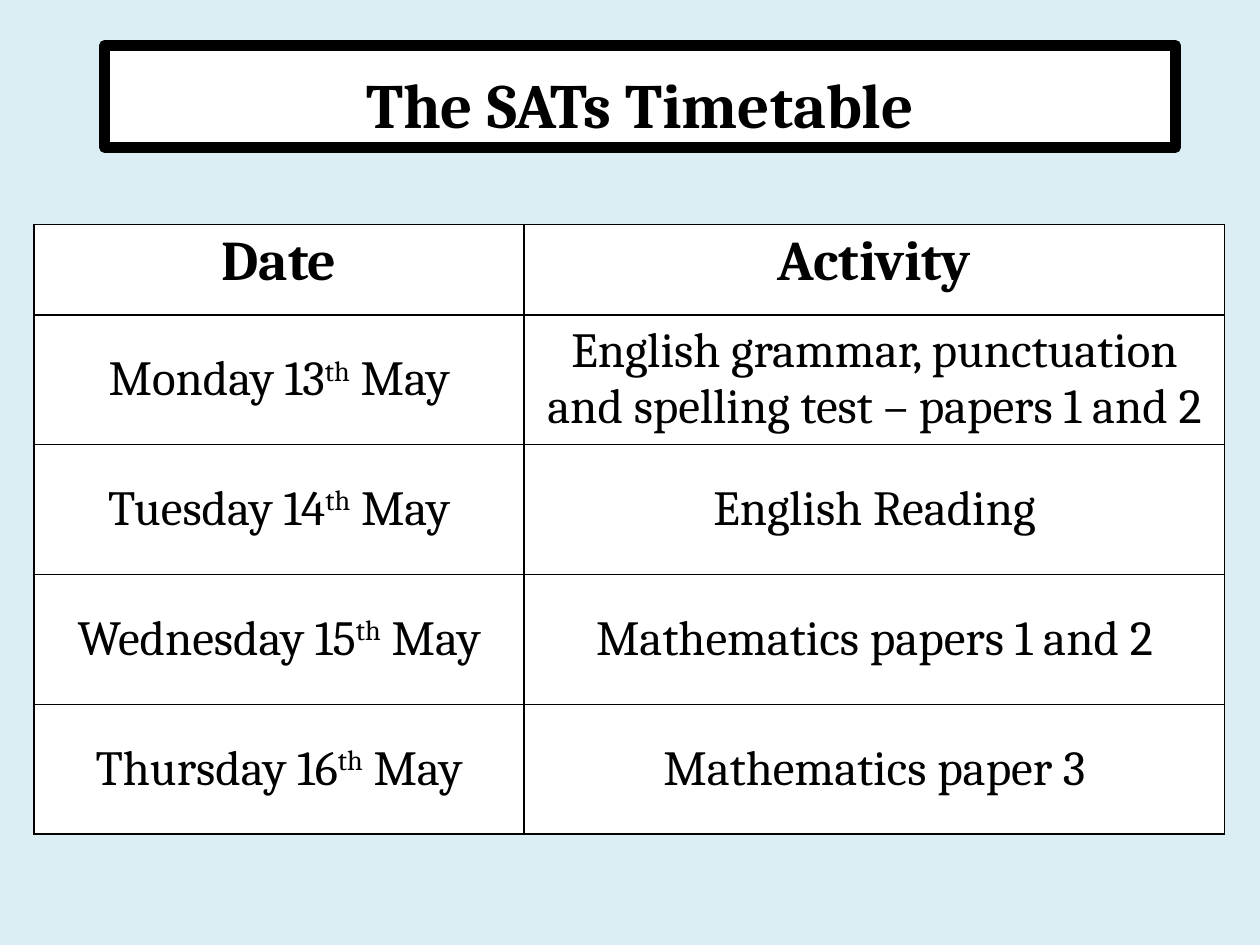
from lxml.etree import SubElement
from pptx import Presentation
from pptx.dml.color import RGBColor
from pptx.enum.text import MSO_ANCHOR as ANCHOR, MSO_AUTO_SIZE as AUTOSIZE, PP_ALIGN as ALIGN
from pptx.oxml.ns import qn
from pptx.util import Inches, Pt

COLORS = {"background": "DBEEF4", "panel": "FFFFFF", "ink": "000000"}
RGB = {name: RGBColor.from_string(value) for name, value in COLORS.items()}
FONT = "Cambria"


def add_run(p, text, size, bold=False, superscript=False):
    p.alignment = ALIGN.CENTER
    r = p.add_run()
    r.text = text
    r.font.name, r.font.size, r.font.bold = FONT, Pt(size), bold
    r.font.color.rgb = RGB["ink"]
    if superscript:
        r.font._element.set("baseline", "30000")


def style_cell(cell, anchor):
    cell.vertical_anchor = anchor
    tcPr = cell._tc.get_or_add_tcPr()
    for side in ("lnL", "lnR", "lnT", "lnB"):
        ln = SubElement(tcPr, qn(f"a:{side}"), w=str(Pt(1)))
        fill = SubElement(ln, qn("a:solidFill"))
        SubElement(fill, qn("a:srgbClr"), val=COLORS["ink"])
    cell.fill.solid()
    cell.fill.fore_color.rgb = RGB["panel"]


prs = Presentation()
prs.slide_width, prs.slide_height = Inches(10), Inches(7.5)
s = prs.slides.add_slide(prs.slide_layouts[5])
s.background.fill.solid()
s.background.fill.fore_color.rgb = RGB["background"]

# Framed title
title = s.shapes.title
title.left, title.top = Inches(0.83), Inches(0.36)
title.width, title.height = Inches(8.5), Inches(0.81)
title.fill.solid()
title.fill.fore_color.rgb = RGB["panel"]
title.line.color.rgb = RGB["ink"]
title.line.width = Pt(6)
tf = title.text_frame
tf.auto_size = AUTOSIZE.NONE
tf.vertical_anchor = ANCHOR.BOTTOM
add_run(tf.paragraphs[0], "The SATs Timetable", 36, bold=True)

# Timetable grid
headings = ["Date", "Activity"]
days = [
    ("Monday 13", "English grammar, punctuation and spelling test – papers 1 and 2"),
    ("Tuesday 14", "English Reading"),
    ("Wednesday 15", "Mathematics papers 1 and 2"),
    ("Thursday 16", "Mathematics paper 3"),
]
col_widths = [3.89, 5.56]
row_heights = [0.72] + [1.03] * len(days)
table = s.shapes.add_table(
    len(row_heights), len(col_widths), Inches(0.27), Inches(1.78),
    Inches(sum(col_widths)), Inches(sum(row_heights))).table
for col, width in zip(table.columns, col_widths):
    col.width = Inches(width)
for row, height in zip(table.rows, row_heights):
    row.height = Inches(height)

# Heading row
for cell, heading in zip(table.rows[0].cells, headings):
    style_cell(cell, ANCHOR.TOP)
    add_run(cell.text_frame.paragraphs[0], heading, 32, bold=True)

# One row per test day
for i, (day, activity) in enumerate(days, start=1):
    date_cell, activity_cell = table.cell(i, 0), table.cell(i, 1)
    style_cell(date_cell, ANCHOR.MIDDLE)
    style_cell(activity_cell, ANCHOR.MIDDLE)
    p = date_cell.text_frame.paragraphs[0]
    add_run(p, day, 28)
    add_run(p, "th", 28, superscript=True)
    add_run(p, " May", 28)
    add_run(activity_cell.text_frame.paragraphs[0], activity, 28)

prs.save("out.pptx")
